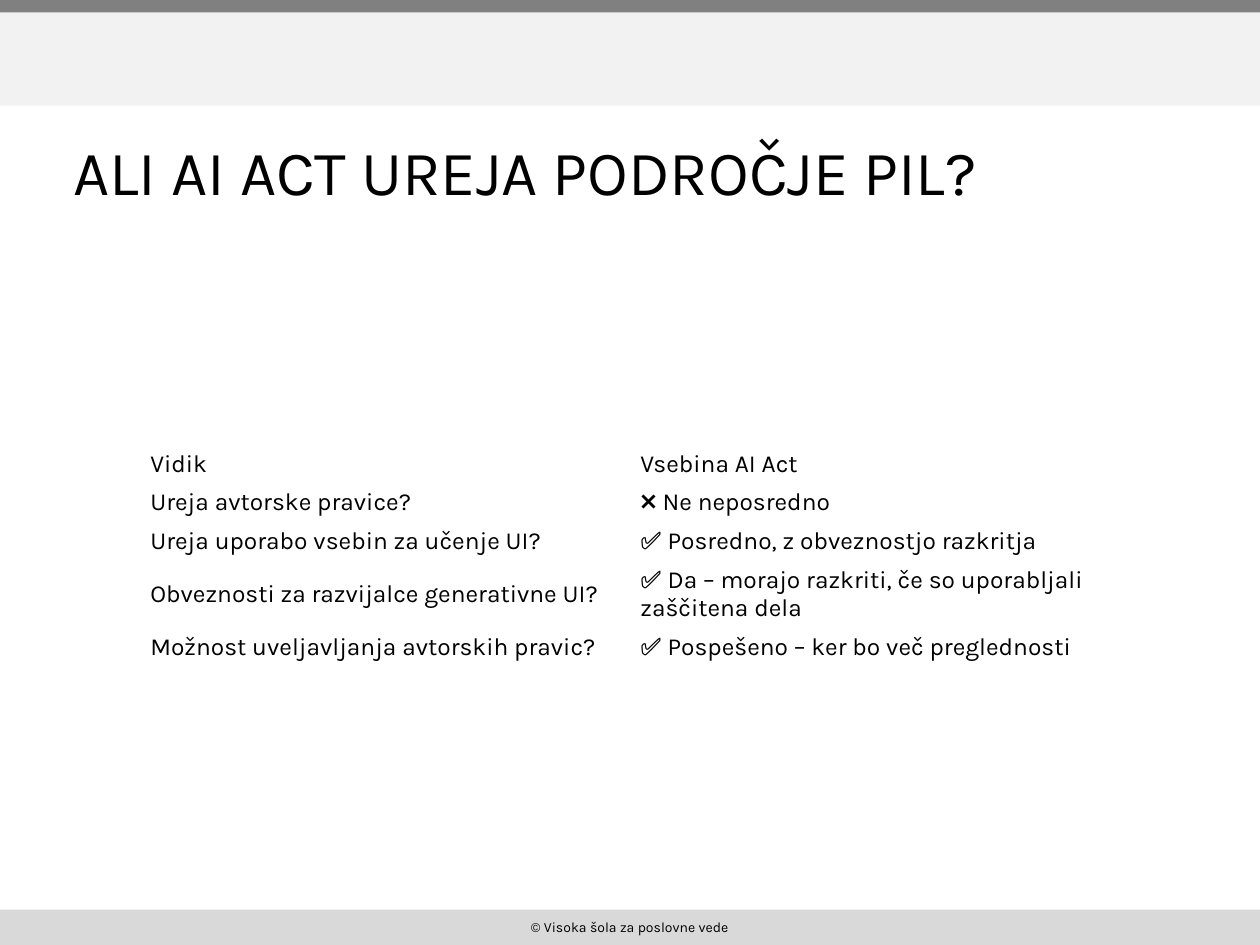
from pptx import Presentation
from pptx.dml.color import RGBColor
from pptx.enum.shapes import MSO_SHAPE as Shape
from pptx.enum.text import MSO_ANCHOR as Anchor, MSO_AUTO_SIZE as AutoSize, PP_ALIGN as Align
from pptx.util import Cm, Pt

COLORS = {"text": "000000", "footer": "D9D9D9", "header": "F2F2F2", "stripe": "808080"}
FONT = "Karla"


def format_text(frame, size, align=Align.LEFT):
    for paragraph in frame.paragraphs:
        paragraph.alignment = align
        for run in paragraph.runs:
            run.font.name = FONT
            run.font.size = Pt(size)
            run.font.bold = False
            run.font.color.rgb = RGBColor.from_string(COLORS["text"])


def add_band(top, height, color):
    band = slide.shapes.add_shape(Shape.RECTANGLE, 0, Cm(top), deck.slide_width, Cm(height))
    band.shadow.inherit = False
    band.fill.solid()
    band.fill.fore_color.rgb = RGBColor.from_string(COLORS[color])
    band.line.fill.background()
    return band


deck = Presentation()
deck.slide_width, deck.slide_height = Cm(25.4), Cm(19.05)
slide = deck.slides.add_slide(deck.slide_layouts[5])

# Header and footer bands
footer = add_band(18.34, 0.71, "footer")
footer.text_frame.text = "© Visoka šola za poslovne vede"
footer.text_frame.vertical_anchor = Anchor.MIDDLE
format_text(footer.text_frame, 8, Align.CENTER)
add_band(0, 2.13, "header")
add_band(0, 0.25, "stripe")

# Title
title = slide.shapes.title
title.left, title.top, title.width, title.height = Cm(1.22), Cm(2.13), Cm(22.86), Cm(2.62)
title.text_frame.text = "ALI AI ACT UREJA PODROČJE PIL?"
title.text_frame.vertical_anchor = Anchor.MIDDLE
title.text_frame.auto_size = AutoSize.NONE
format_text(title.text_frame, 36)

# Table of aspects and what the act says about them
aspects = [
    ("Vidik", "Vsebina AI Act"),
    ("Ureja avtorske pravice?", "❌ Ne neposredno"),
    ("Ureja uporabo vsebin za učenje UI?", "✅ Posredno, z obveznostjo razkritja"),
    ("Obveznosti za razvijalce generativne UI?",
     "✅ Da – morajo razkriti, če so uporabljali zaščitena dela"),
    ("Možnost uveljavljanja avtorskih pravic?", "✅ Pospešeno – ker bo več preglednosti"),
]
row_heights = [0.77, 0.77, 0.77, 1.33, 0.77]
overview = slide.shapes.add_table(
    len(aspects), 2, Cm(2.84), Cm(8.97), Cm(19.76), Cm(sum(row_heights))).table
overview.first_row = False
overview.horz_banding = False
for row, height, texts in zip(overview.rows, row_heights, aspects):
    row.height = Cm(height)
    for cell, text in zip(row.cells, texts):
        cell.fill.background()
        cell.vertical_anchor = Anchor.MIDDLE
        cell.margin_left = cell.margin_right = Cm(0.19)
        cell.margin_top = cell.margin_bottom = Cm(0.1)
        cell.text_frame.text = text
        format_text(cell.text_frame, 14)

deck.save("out.pptx")
